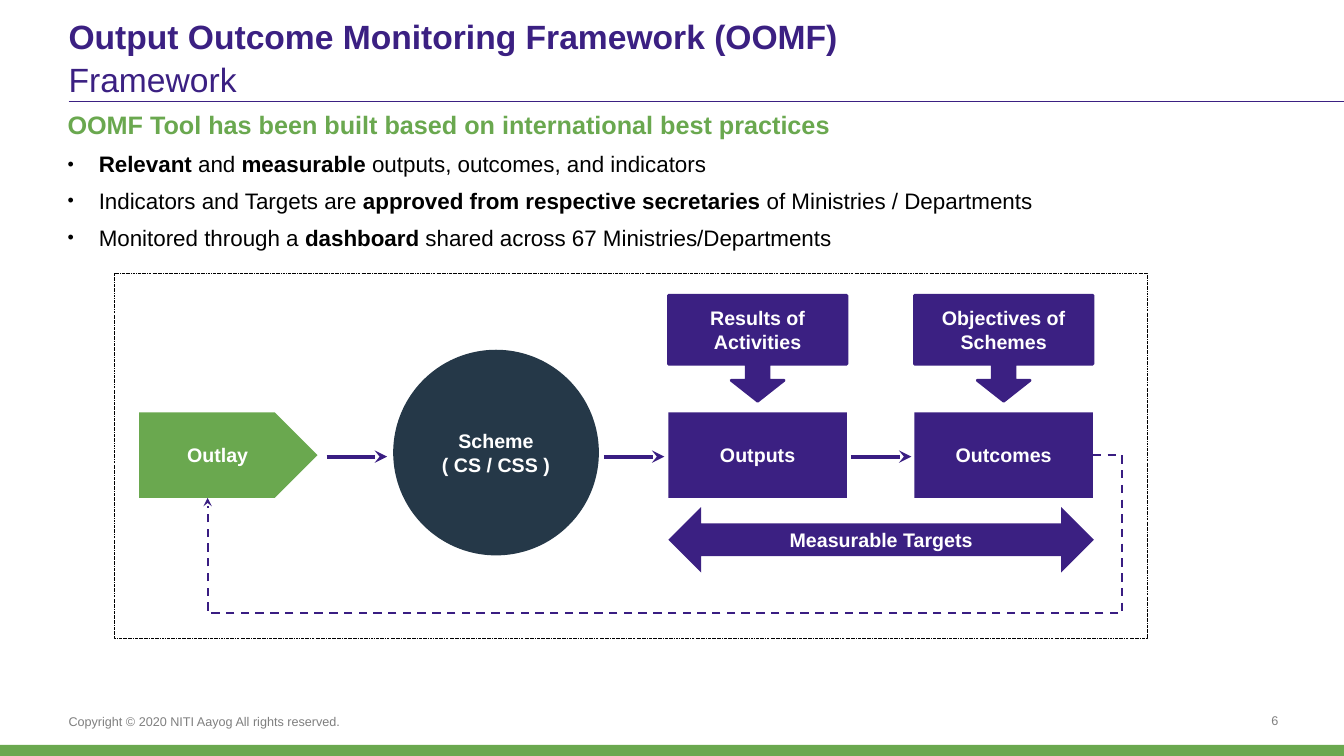
from lxml.etree import SubElement
from pptx import Presentation
from pptx.dml.color import RGBColor
from pptx.enum.dml import MSO_LINE
from pptx.enum.shapes import MSO_CONNECTOR, MSO_SHAPE
from pptx.enum.text import MSO_ANCHOR, PP_ALIGN
from pptx.oxml.ns import qn
from pptx.util import Inches, Pt

PURPLE, ARROW, GREEN, NAVY = "3B2082", "391D82", "6AA84F", "253848"
WHITE, BLACK, GREY = "FFFFFF", "000000", "7F7F7F"


def color(hex_code):
    return RGBColor.from_string(hex_code)


def write(shape, paragraphs, size, font_color, bold=False, align=PP_ALIGN.LEFT,
          anchor=MSO_ANCHOR.MIDDLE, bullet=False, margin=0, **spacing):
    """Fill a shape with paragraphs, each a list of (text, bold) runs or a string."""
    frame = shape.text_frame
    frame.word_wrap = True
    frame.vertical_anchor = anchor
    for side, inset in {"left": margin, "right": margin, "top": margin / 2, "bottom": margin / 2}.items():
        setattr(frame, f"margin_{side}", Inches(inset))
    for index, runs in enumerate(paragraphs):
        paragraph = frame.paragraphs[0] if index == 0 else frame.add_paragraph()
        for name, value in {"alignment": align, **spacing}.items():
            setattr(paragraph, name, value)
        if bullet:
            properties = paragraph._p.get_or_add_pPr()
            properties.set("marL", str(Inches(0.31)))
            properties.set("indent", str(-Inches(0.31)))
            SubElement(SubElement(properties, qn("a:buClr")), qn("a:srgbClr"), val=BLACK)
            SubElement(properties, qn("a:buSzPct"), val="80000")
            SubElement(properties, qn("a:buFont"), typeface="Arial")
            SubElement(properties, qn("a:buChar"), char="•")
        for text, is_bold in [(runs, bold)] if isinstance(runs, str) else runs:
            run = paragraph.add_run()
            run.text = text
            for name, value in {"name": "Arial", "size": Pt(size), "bold": is_bold}.items():
                setattr(run.font, name, value)
            run.font.color.rgb = color(font_color)


presentation = Presentation()
presentation.slide_width, presentation.slide_height = Inches(13.33), Inches(7.5)
slide = presentation.slides.add_slide(presentation.slide_layouts[6])
shapes = slide.shapes

# Text: title, headline, bullets, footer
bullets = [
    [("Relevant", True), (" and ", False), ("measurable", True),
     (" outputs, outcomes, and indicators", False)],
    [("Indicators and Targets are ", False), ("approved from respective secretaries ", True),
     ("of Ministries / Departments", False)],
    [("Monitored through a ", False), ("dashboard", True),
     (" shared across 67 Ministries/Departments", False)],
]
title = [[("Output Outcome Monitoring Framework (OOMF)", True)], [("Framework", False)]]
headline = ["OOMF Tool has been built based on international best practices"]
copyright_line = ["Copyright © 2020 NITI Aayog All rights reserved."]
bottom = {"anchor": MSO_ANCHOR.BOTTOM}
text_boxes = [
    ((0.68, 0.12, 11.99, 0.86), title, 24, PURPLE, {**bottom, "line_spacing": 1.05}),
    ((0.67, 1.03, 12.01, 0.41), headline, 18, GREEN, {"bold": True}),
    ((0.67, 1.48, 12, 1.1), bullets, 16, BLACK,
     {"anchor": MSO_ANCHOR.TOP, "bullet": True, "space_after": Pt(6), "line_spacing": 1.05}),
    ((0.68, 7.07, 4.22, 0.16), copyright_line, 9, GREY, bottom),
    ((11.54, 7.03, 1.14, 0.19), ["6"], 9, "808080", {**bottom, "align": PP_ALIGN.RIGHT}),
]
for box, paragraphs, size, font_color, options in text_boxes:
    write(shapes.add_textbox(*map(Inches, box)), paragraphs, size, font_color, **options)

# Footer bar, diagram frame and diagram blocks
left_column, right_column, block_width, block_height, row = 6.63, 9.07, 1.77, 0.85, 4.09
callout, rectangle = MSO_SHAPE.DOWN_ARROW_CALLOUT, MSO_SHAPE.RECTANGLE
blocks = [
    (rectangle, (0, 7.39, 13.33, 0.11), GREEN, []),
    (rectangle, (1.13, 2.71, 10.25, 3.62), WHITE, []),
    (rectangle, (left_column, row, block_width, block_height), PURPLE, ["Outputs"]),
    (rectangle, (right_column, row, block_width, block_height), PURPLE, ["Outcomes"]),
    (MSO_SHAPE.PENTAGON, (1.38, row, block_width, block_height), GREEN, ["Outlay"]),
    (MSO_SHAPE.OVAL, (3.9, 3.47, 2.04, 2.04), NAVY, ["Scheme", "( CS / CSS )"]),
    (callout, (left_column, 2.93, block_width, 1.05), PURPLE, ["Results of Activities"]),
    (callout, (right_column, 2.93, block_width, 1.05), PURPLE, ["Objectives of Schemes"]),
    (MSO_SHAPE.LEFT_RIGHT_ARROW, (left_column, 5.03, 4.22, 0.65), PURPLE, ["Measurable Targets"]),
]
drawn = []
for kind, box, fill, label in blocks:
    shape = shapes.add_shape(kind, *map(Inches, box))
    shape.shadow.inherit = False
    shape.fill.solid()
    shape.fill.fore_color.rgb = color(fill)
    shape.line.fill.background()
    if kind == callout:
        shape.line.color.rgb = color(PURPLE)
        shape.line.width = Pt(2)
        for index, value in enumerate((0.215, 0.25, 0.197, 0.65)):
            shape.adjustments[index] = value
    if label:
        write(shape, label, 14, WHITE, bold=True, align=PP_ALIGN.CENTER, margin=0.1)
    drawn.append(shape)
frame, outcomes = drawn[1], drawn[3]
frame.line.color.rgb = color(BLACK)
frame.line.width = Pt(0.25)
frame.line.dash_style = MSO_LINE.LONG_DASH_DOT

# Title rule, flow arrows and dashed feedback loop
straight, elbow = MSO_CONNECTOR.STRAIGHT, MSO_CONNECTOR.ELBOW
connectors = [(straight, (0.68, 1.01, 13.33, 1.01), PURPLE, 1)]
connectors += [(straight, (x, 4.53, x + 0.6, 4.53), ARROW, 3) for x in (3.24, 5.99, 8.44)]
connectors.append((elbow, (10.84, 4.52, 2.06, 4.94), ARROW, 1.5))
for kind, ends, line_color, width in connectors:
    connector = shapes.add_connector(kind, *map(Inches, ends))
    connector.line.color.rgb = color(line_color)
    connector.line.width = Pt(width)
    if kind == elbow:
        connector.line.dash_style = MSO_LINE.DASH
        connector.begin_connect(outcomes, 3)
        geometry = connector._element.spPr.find(qn("a:prstGeom"))
        geometry.set("prst", "bentConnector4")
        guides = geometry.find(qn("a:avLst"))
        for name, value in {"adj1": -3300, "adj2": 369200}.items():
            SubElement(guides, qn("a:gd"), name=name, fmla=f"val {value}")
    if line_color == ARROW:
        SubElement(connector.line._get_or_add_ln(), qn("a:tailEnd"), type="stealth")
    SubElement(connector._element.spPr, qn("a:effectLst"))

presentation.save("out.pptx")
